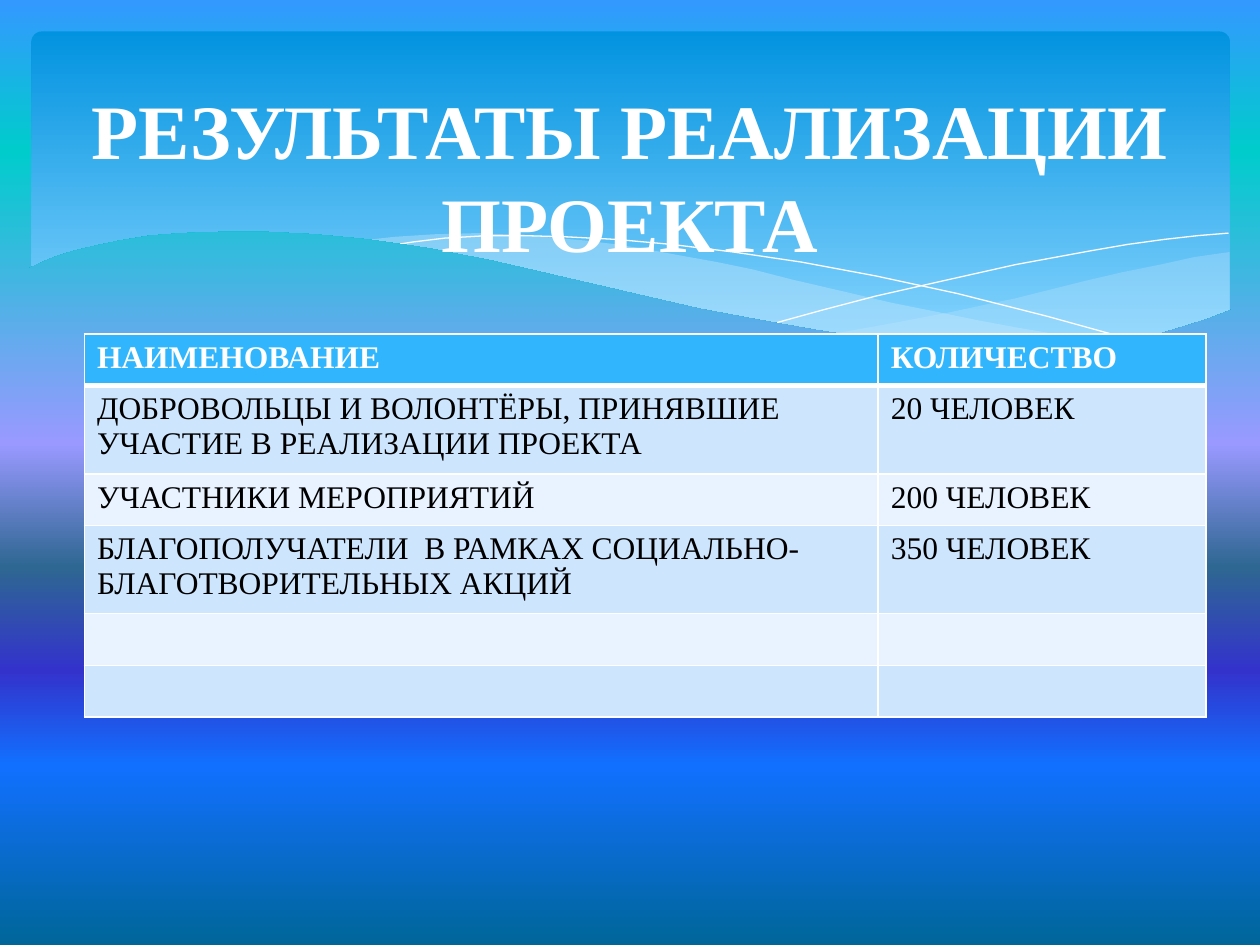
from dataclasses import dataclass

from pptx import Presentation
from pptx import util as u
from pptx.dml.color import RGBColor
from pptx.enum import shapes, text
from pptx.oxml import parse_xml
from pptx.oxml.ns import nsdecls, qn

FONT = "Times New Roman"
INK = {
    "white": "FFFFFF", "black": "000000", "haze": "C6E7FC",
    "head": "31B6FD", "odd": "CEE5FE", "even": "E8F3FF",
}
SKY = [(0, "3399FF"), (16, "00CCCC"), (47, "9999FF"), (60, "2E6792"),
       (71, "3333CC"), (81, "1170FF"), (100, "006699")]
PANEL = [(0, "0293E0"), (90, "83D3FE")]


@dataclass
class Wave:
    """An outline in inches; clear is the opacity in percent, None for a line."""
    points: list[tuple[float, float]]
    clear: int | None = None


RIGHT = Wave([
    (9.76, 2), (9.48, 2.04), (9.21, 2.1), (8.91, 2.16), (8.61, 2.23),
    (8.05, 2.37), (7.53, 2.48), (7.06, 2.57), (6.61, 2.65), (6.91, 2.69),
    (7.19, 2.72), (7.45, 2.75), (7.69, 2.77), (8.03, 2.78), (8.35, 2.77),
    (8.63, 2.75), (8.89, 2.72), (9.13, 2.67), (9.35, 2.62), (9.49, 2.57),
    (9.63, 2.52), (9.76, 2.47)], 29)
MIDDLE = Wave([
    (8.93, 2.73), (8.66, 2.69), (8.37, 2.65), (8.07, 2.6), (7.75, 2.54),
    (7.41, 2.47), (7.06, 2.4), (6.68, 2.31), (6.29, 2.22), (5.98, 2.14),
    (5.69, 2.08), (5.41, 2.03), (5.14, 1.98), (4.89, 1.94), (4.65, 1.91),
    (4.42, 1.89), (4.2, 1.87), (3.8, 1.85), (3.44, 1.86), (3.13, 1.88),
    (2.86, 1.91), (3.23, 1.96), (3.62, 2.03), (4.04, 2.11), (4.49, 2.22),
    (4.91, 2.32), (5.3, 2.4), (5.66, 2.48), (6.01, 2.55), (6.34, 2.61),
    (6.65, 2.66), (6.95, 2.7), (7.22, 2.74), (7.48, 2.76), (7.73, 2.77),
    (8.07, 2.78), (8.38, 2.78), (8.67, 2.76)], 40)
FALL = Wave([
    (3.09, 1.95), (3.28, 1.92), (3.53, 1.89), (3.87, 1.87), (4.16, 1.87),
    (4.5, 1.88), (4.89, 1.9), (5.33, 1.94), (5.82, 2), (6.36, 2.08),
    (6.95, 2.19), (7.6, 2.33), (8.31, 2.51), (9.07, 2.72)])
RISE = Wave([
    (6.13, 2.57), (6.53, 2.46), (6.95, 2.35), (7.48, 2.23), (8.06, 2.1),
    (8.66, 1.99), (8.95, 1.94), (9.24, 1.9), (9.51, 1.87), (9.75, 1.85)])
FRONT = Wave([
    (9.77, 2.46), (9.59, 2.53), (9.4, 2.59), (9.2, 2.65), (8.99, 2.69),
    (8.75, 2.73), (8.5, 2.75), (8.23, 2.77), (7.93, 2.76), (7.61, 2.75),
    (7.26, 2.72), (6.88, 2.68), (6.48, 2.62), (6.03, 2.54), (5.55, 2.45),
    (5.03, 2.33), (4.47, 2.2), (3.91, 2.07), (3.4, 1.97), (2.92, 1.9),
    (2.5, 1.86), (2.11, 1.84), (1.77, 1.84), (1.46, 1.85), (1.19, 1.87),
    (0.95, 1.91), (0.76, 1.95), (0.59, 1.99), (0.46, 2.03), (0.36, 2.07),
    (0.23, 2.13), (0.23, 3.29), (9.77, 3.29)], 100)

ROWS = [
    ("НАИМЕНОВАНИЕ", "КОЛИЧЕСТВО"),
    ("ДОБРОВОЛЬЦЫ И ВОЛОНТЁРЫ, ПРИНЯВШИЕ УЧАСТИЕ В РЕАЛИЗАЦИИ ПРОЕКТА",
     "20 ЧЕЛОВЕК"),
    ("УЧАСТНИКИ МЕРОПРИЯТИЙ", "200 ЧЕЛОВЕК"),
    ("БЛАГОПОЛУЧАТЕЛИ  В РАМКАХ СОЦИАЛЬНО-БЛАГОТВОРИТЕЛЬНЫХ АКЦИЙ",
     "350 ЧЕЛОВЕК"),
    ("", ""),
    ("", ""),
]


def rgb(name: str) -> RGBColor:
    return RGBColor.from_string(INK[name])


def blend(fill, root, stops: list[tuple[int, str]]) -> None:
    """Give fill, held in the XML under root, a top-down gradient."""
    fill.gradient()
    fill.gradient_angle = 270
    marks = next(root.iter(qn("a:gsLst")))
    marks.clear()
    for pos, tint in stops:
        marks.append(parse_xml(
            f'<a:gs {nsdecls("a")} pos="{pos * 1000}">'
            f'<a:srgbClr val="{tint}"/></a:gs>'))


def style(para, size: int, tint: str, bold: bool) -> None:
    font = para.font
    font.name, font.size, font.bold = FONT, u.Pt(size), bold
    font.color.rgb = rgb(tint)


def draw_wave(slide, wave: Wave):
    first, *rest = [(u.Inches(x), u.Inches(y)) for x, y in wave.points]
    pen = slide.shapes.build_freeform(*first)
    pen.add_line_segments(rest, close=wave.clear is not None)
    shape = pen.convert_to_shape()
    shape.shadow.inherit = False
    if wave.clear is None:
        shape.fill.background()
        shape.line.color.rgb = rgb("white")
        shape.line.width = u.Pt(0)
        return shape
    shape.line.fill.background()
    if wave.clear < 100:
        shape.fill.solid()
        shape.fill.fore_color.rgb = rgb("haze")
        tint = next(shape.element.spPr.iter(qn("a:srgbClr")))
        tint.append(parse_xml(
            f'<a:alpha {nsdecls("a")} val="{wave.clear * 1000}"/>'))
    return shape


def draw_panel(slide) -> None:
    panel = slide.shapes.add_shape(
        shapes.MSO_SHAPE.ROUNDED_RECTANGLE,
        u.Inches(0.25), u.Inches(0.25), u.Inches(9.51), u.Inches(2.7))
    panel.adjustments[0] = 0.03
    panel.shadow.inherit = False
    panel.line.fill.background()
    blend(panel.fill, panel.element, PANEL)


def draw_title(slide) -> None:
    box = slide.shapes.add_textbox(
        u.Inches(0.5), u.Inches(0.37), u.Inches(9), u.Inches(2.04))
    frame = box.text_frame
    frame.word_wrap = True
    frame.vertical_anchor = text.MSO_ANCHOR.MIDDLE
    para = frame.paragraphs[0]
    para.text = "РЕЗУЛЬТАТЫ РЕАЛИЗАЦИИ ПРОЕКТА"
    para.alignment = text.PP_ALIGN.CENTER
    style(para, 44, "white", True)


def edge(cell, base: int) -> None:
    """Draw white cell borders, the lower one base points wide."""
    props = cell._tc.get_or_add_tcPr()
    for spot, (side, width) in enumerate(
            [("L", 1), ("R", 1), ("T", 1), ("B", base)]):
        props.insert(spot, parse_xml(
            f'<a:ln{side} {nsdecls("a")} w="{u.Pt(width)}"><a:solidFill>'
            f'<a:srgbClr val="{INK["white"]}"/></a:solidFill></a:ln{side}>'))


def draw_table(slide) -> None:
    high = u.Inches(0.41)
    grid = slide.shapes.add_table(
        len(ROWS), 2, u.Inches(0.67), u.Inches(2.65),
        u.Inches(8.9), high * len(ROWS)).table
    for col, width in zip(grid.columns, (6.3, 2.6)):
        col.width = u.Inches(width)
    for i, row in enumerate(ROWS):
        grid.rows[i].height = high
        head = i == 0
        for j, words in enumerate(row):
            cell = grid.cell(i, j)
            cell.text = words
            cell.fill.solid()
            cell.fill.fore_color.rgb = rgb(
                "head" if head else "odd" if i % 2 else "even")
            edge(cell, 3 if head else 1)
            style(cell.text_frame.paragraphs[0], 18,
                  "white" if head else "black", head)


def main() -> None:
    deck = Presentation()
    deck.slide_width, deck.slide_height = u.Inches(10), u.Inches(7.5)
    slide = deck.slides.add_slide(deck.slide_layouts[6])
    blend(slide.background.fill, slide.element, SKY)
    draw_panel(slide)
    for wave in (RIGHT, MIDDLE, FALL, RISE):
        draw_wave(slide, wave)
    # The front wave shows the slide background through the panel.
    draw_wave(slide, FRONT).element.set("useBgFill", "1")
    draw_title(slide)
    draw_table(slide)
    deck.save("out.pptx")


if __name__ == "__main__":
    main()
